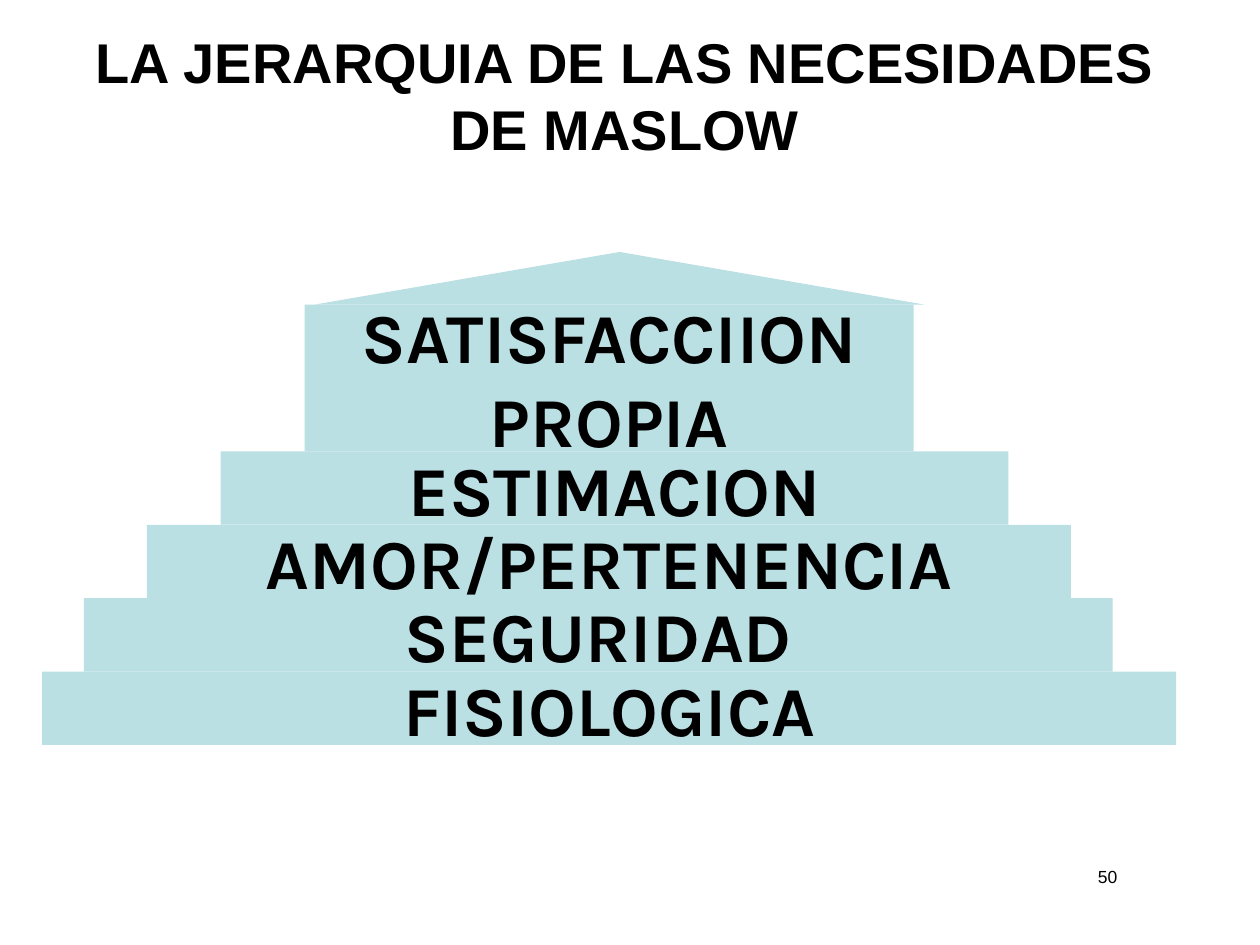
from pptx import Presentation
from pptx.dml.color import RGBColor
from pptx.enum.shapes import MSO_SHAPE
from pptx.enum.text import MSO_ANCHOR, PP_ALIGN
from pptx.util import Cm, Pt

RECTANGLE = MSO_SHAPE.RECTANGLE
TRIANGLE = MSO_SHAPE.ISOSCELES_TRIANGLE
MIDDLE = MSO_ANCHOR.MIDDLE
CENTER = PP_ALIGN.CENTER

BLACK = RGBColor(0x00, 0x00, 0x00)
WHITE = RGBColor(0xFF, 0xFF, 0xFF)
PALE_TEAL = RGBColor(0xBB, 0xE0, 0xE3)

TITLE_FONT = {"name": "Arial", "size": Pt(32), "bold": True}
TIER_FONT = {"name": "Karla", "size": Pt(40), "bold": True}
NUMBER_FONT = {"name": "Arial", "size": Pt(10), "bold": False}

TIER_TOP = 6.14
LINE_HEIGHT = 1.48
TIERS = [
    (6.14, 12.28, ["SATISFACCIION", "PROPIA"]),
    (4.45, 15.88, ["ESTIMACION"]),
    (2.96, 18.63, ["AMOR/PERTENENCIA"]),
    (1.69, 20.74, ["SEGURIDAD"]),
    (0.85, 22.86, ["FISIOLOGICA"]),
]


class PyramidSlide:
    def __init__(self, deck):
        self.slide = deck.slides.add_slide(deck.slide_layouts[5])

    def set_text(self, frame, lines, font, wrap):
        frame.text = "\n".join(lines)
        frame_format = {"vertical_anchor": MIDDLE, "word_wrap": wrap}
        for attribute, value in frame_format.items():
            setattr(frame, attribute, value)
        for paragraph in frame.paragraphs:
            paragraph.alignment = CENTER
            for run in paragraph.runs:
                for attribute, value in font.items():
                    setattr(run.font, attribute, value)
                run.font.color.rgb = BLACK

    def title(self, text, left, top, width, height):
        heading = self.slide.shapes.title
        place = {"left": left, "top": top, "width": width, "height": height}
        for attribute, value in place.items():
            setattr(heading, attribute, Cm(value))
        self.set_text(heading.text_frame, [text], TITLE_FONT, True)

    def block(self, preset, left, top, width, height, fill=PALE_TEAL):
        block = self.slide.shapes.add_shape(
            preset, Cm(left), Cm(top), Cm(width), Cm(height)
        )
        block.shadow.inherit = False
        block.fill.solid()
        block.fill.fore_color.rgb = fill
        block.line.fill.background()
        return block

    def tier(self, left, top, width, height, lines):
        step = self.block(RECTANGLE, left, top, width, height)
        self.set_text(step.text_frame, lines, TIER_FONT, False)

    def number(self, text, left, top, width, height):
        label = self.block(RECTANGLE, left, top, width, height, WHITE)
        self.set_text(label.text_frame, [text], NUMBER_FONT, False)


def main():
    deck = Presentation()
    deck.slide_width, deck.slide_height = Cm(25.4), Cm(19.05)
    pyramid = PyramidSlide(deck)
    pyramid.title(
        "LA JERARQUIA DE LAS NECESIDADES DE MASLOW", 1.27, 0.85, 22.65, 2.12
    )
    top = TIER_TOP
    for left, width, lines in TIERS:
        height = LINE_HEIGHT * len(lines)
        pyramid.tier(left, top, width, height, lines)
        top += height
    pyramid.block(TRIANGLE, 6.35, 5.08, 12.28, 1.06)
    pyramid.number("50", 21.59, 17.36, 1.48, 0.64)
    deck.save("out.pptx")


if __name__ == "__main__":
    main()
